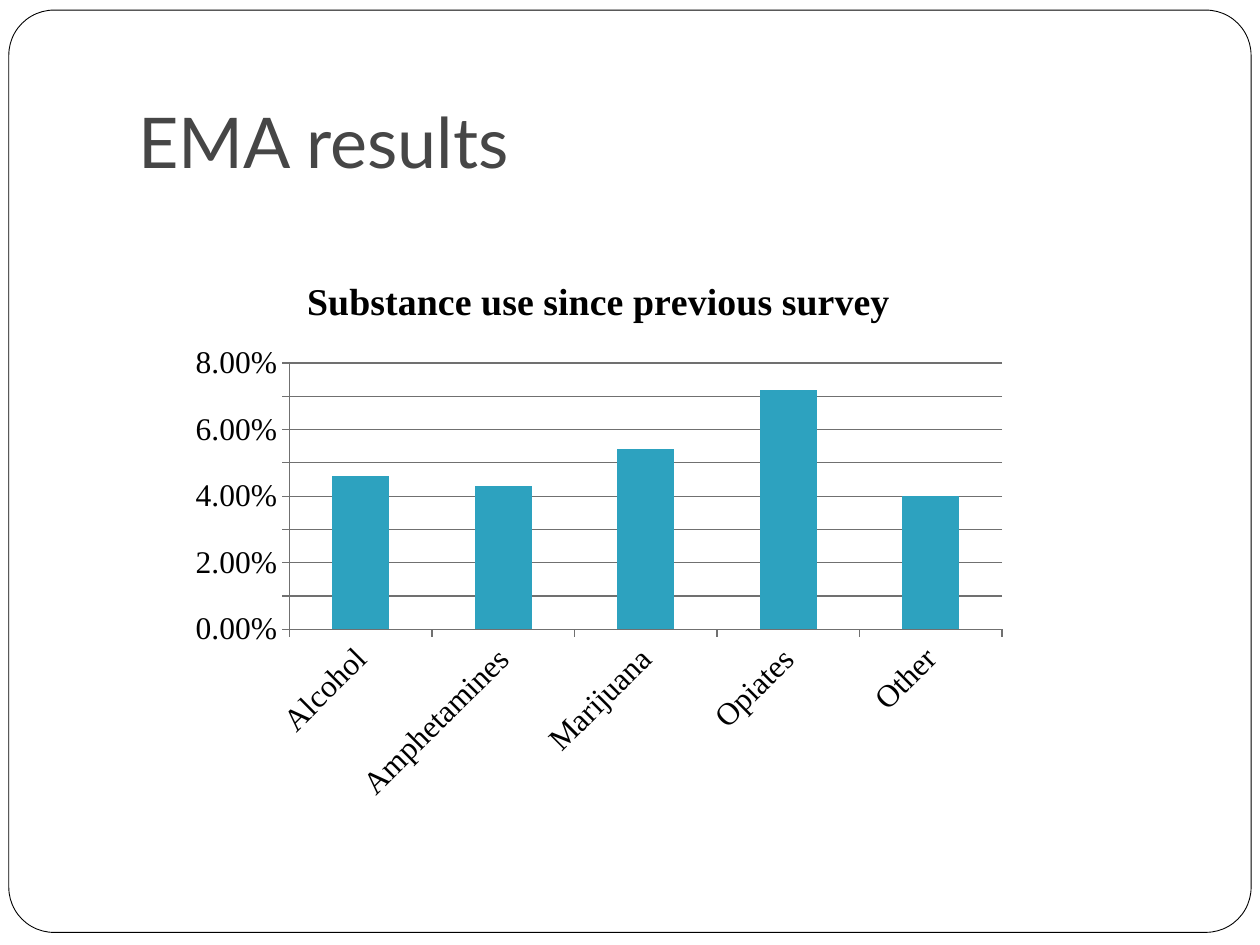
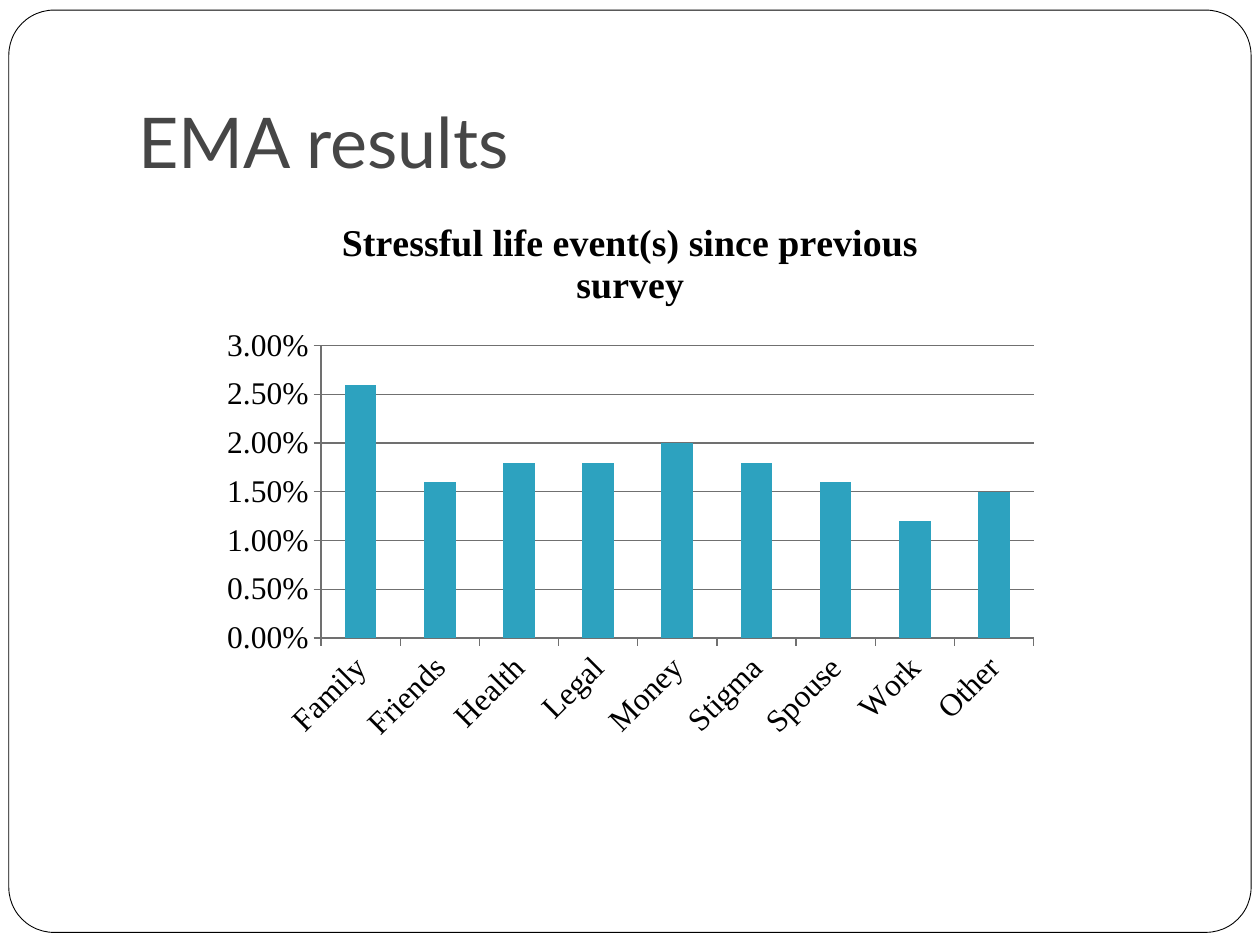
from dataclasses import dataclass

from pptx import Presentation
from pptx.chart.data import CategoryChartData
from pptx.dml.color import RGBColor
from pptx.enum.chart import XL_CHART_TYPE, XL_TICK_MARK
from pptx.enum.shapes import MSO_SHAPE
from pptx.enum.text import MSO_ANCHOR
from pptx.util import Pt

COLUMNS = XL_CHART_TYPE.COLUMN_CLUSTERED
TICK_OUTSIDE = XL_TICK_MARK.OUTSIDE
ROUNDED = MSO_SHAPE.ROUNDED_RECTANGLE
BOTTOM = MSO_ANCHOR.BOTTOM

# Content: one entry per slide
HEADING = "EMA results"
SURVEYS = [
    {
        "title": "Substance use since previous survey",
        "series": "Series 1",
        "corner": (102.24, 144),
        "top_value": 0.08,
        "step": 0.01,
        "rates": {"Alcohol": 0.046, "Amphetamines": 0.043, "Marijuana": 0.054,
                  "Opiates": 0.072, "Other": 0.04},
    },
    {
        "title": "Stressful life event(s) since previous survey",
        "series": "Stressful life event(s) since previous survey",
        "corner": (120.24, 110.16),
        "top_value": 0.03,
        "step": 0.005,
        "rates": {"Family": 0.026, "Friends": 0.016, "Health": 0.018,
                  "Legal": 0.018, "Money": 0.02, "Stigma": 0.018,
                  "Spouse": 0.016, "Work": 0.012, "Other": 0.015},
    },
]

# Layout in points
SLIDE_SIZE = (720, 540)
FRAME_BOX = (5.04, 5.76, 709.92, 527.04)
HEADING_BOX = (72, 21.6, 612, 90)
CHART_SIZE = (480, 320)
LABEL_ROTATION = -45


@dataclass(frozen=True)
class Theme:
    paper: RGBColor = RGBColor(0xFF, 0xFF, 0xFF)
    ink: RGBColor = RGBColor(0, 0, 0)
    heading: RGBColor = RGBColor(0x46, 0x46, 0x46)
    bars: RGBColor = RGBColor(0x2D, 0xA2, 0xBF)
    grid: RGBColor = RGBColor(0x70, 0x70, 0x70)
    heading_font: str = "Lato"
    chart_font: str = "Times New Roman"
    heading_size: float = 40
    chart_title_size: float = 21.6
    label_size: float = 18
    frame_width: float = 0.5
    grid_width: float = 0.75


THEME = Theme()


def points(values):
    return [Pt(value) for value in values]


def style_font(font, name, size, color, bold=False):
    font.name, font.size, font.bold = name, Pt(size), bold
    font.color.rgb = color


def style_line(line, color, width):
    line.color.rgb = color
    line.width = Pt(width)


def add_frame(slide):
    frame = slide.shapes.add_shape(ROUNDED, *points(FRAME_BOX))
    frame.adjustments[0] = 0.049
    frame.shadow.inherit = False
    frame.fill.solid()
    frame.fill.fore_color.rgb = THEME.paper
    style_line(frame.line, THEME.ink, THEME.frame_width)


def add_heading(slide):
    text = slide.shapes.add_textbox(*points(HEADING_BOX)).text_frame
    text.word_wrap = True
    text.vertical_anchor = BOTTOM
    text.margin_left = text.margin_right = text.margin_bottom = Pt(7.2)
    text.margin_top = Pt(3.6)
    text.text = HEADING
    style_font(text.paragraphs[0].font, THEME.heading_font,
               THEME.heading_size, THEME.heading)


def add_survey_chart(slide, survey):
    data = CategoryChartData(number_format="0.00%")
    data.categories = list(survey["rates"])
    data.add_series(survey["series"], list(survey["rates"].values()))
    chart = slide.shapes.add_chart(
        COLUMNS, *points(survey["corner"] + CHART_SIZE), data).chart
    chart.has_legend = False
    style_font(chart.font, THEME.chart_font, THEME.label_size, THEME.ink)

    # Chart title
    chart.has_title = True
    chart.chart_title.include_in_layout = False
    title = chart.chart_title.text_frame
    title.text = survey["title"]
    style_font(title.paragraphs[0].font, THEME.chart_font,
               THEME.chart_title_size, THEME.ink, bold=True)

    # Bars
    plot = chart.plots[0]
    plot.gap_width = 150
    plot.vary_by_categories = False
    bars = plot.series[0].format.fill
    bars.solid()
    bars.fore_color.rgb = THEME.bars

    # Axes and grid
    kinds, rates = chart.category_axis, chart.value_axis
    for axis in (kinds, rates):
        axis.major_tick_mark = TICK_OUTSIDE
        style_line(axis.format.line, THEME.grid, THEME.grid_width)
        style_font(axis.tick_labels.font, THEME.chart_font,
                   THEME.label_size, THEME.ink)
    rates.minimum_scale = 0
    rates.maximum_scale = survey["top_value"]
    rates.major_unit = survey["step"]
    rates.tick_labels.number_format = "0.00%"
    rates.tick_labels.number_format_is_linked = False
    rates.has_major_gridlines = True
    style_line(rates.major_gridlines.format.line, THEME.grid, THEME.grid_width)

    # Slanted category labels, in 60000ths of a degree
    label_body = kinds._element.txPr.bodyPr
    label_body.set("rot", str(LABEL_ROTATION * 60000))
    label_body.set("vert", "horz")


def main():
    deck = Presentation()
    deck.slide_width, deck.slide_height = points(SLIDE_SIZE)
    blank = deck.slide_layouts[6]
    for survey in SURVEYS:
        slide = deck.slides.add_slide(blank)
        add_frame(slide)
        add_heading(slide)
        add_survey_chart(slide, survey)
    deck.save("out.pptx")


if __name__ == "__main__":
    main()
